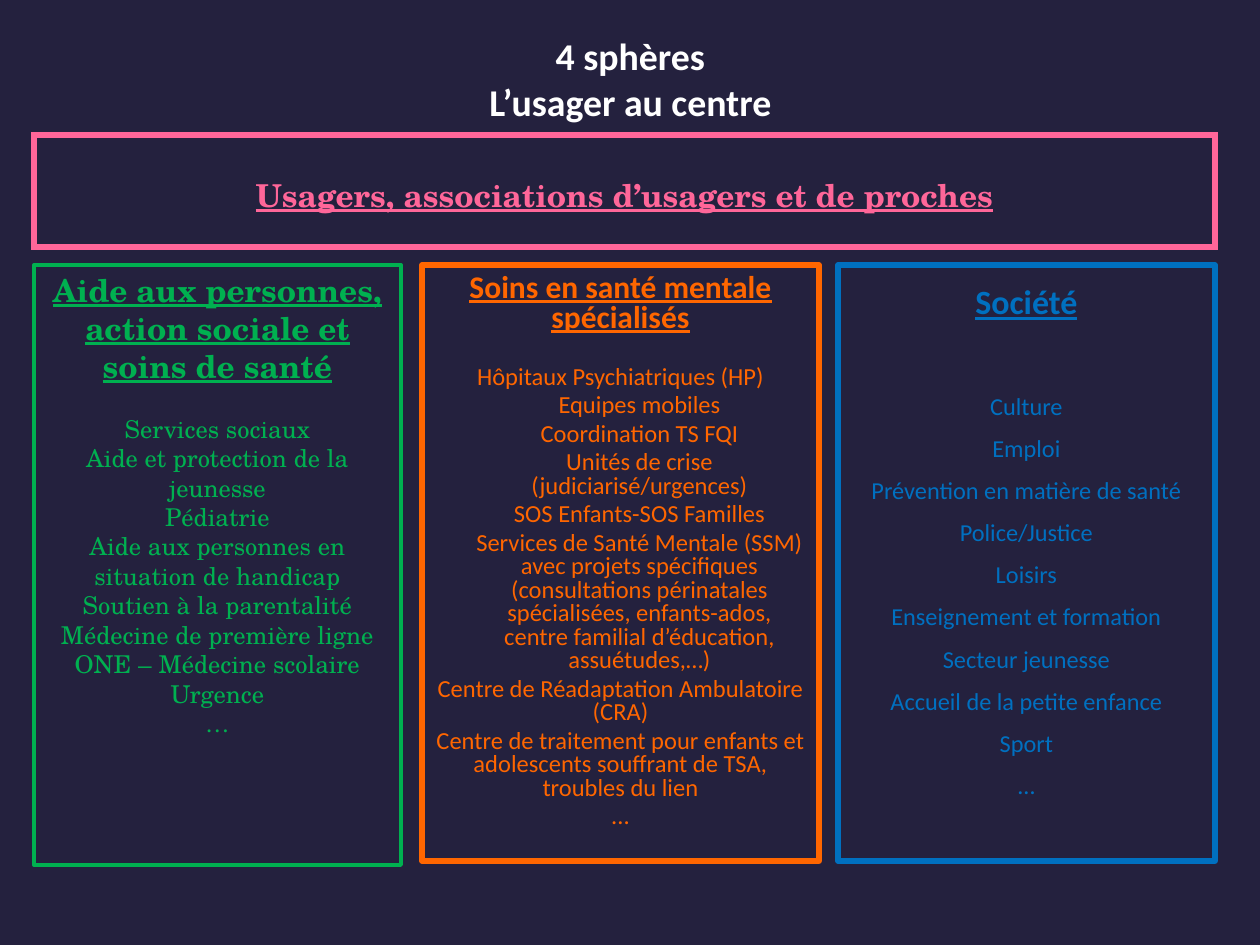
from lxml import etree
from pptx import Presentation
from pptx.dml.color import RGBColor
from pptx.enum.shapes import MSO_SHAPE
from pptx.enum.text import MSO_ANCHOR, PP_ALIGN
from pptx.oxml.ns import qn
from pptx.util import Emu, Pt

EMU_PER_PX = 914400 / 126
RECTANGLE = MSO_SHAPE.RECTANGLE
TOP, MIDDLE = MSO_ANCHOR.TOP, MSO_ANCHOR.MIDDLE
CENTER = PP_ALIGN.CENTER

SANS, SERIF = "Calibri", "TeX Gyre Schola"
NAVY, WHITE = "24213E", "FFFFFF"
PINK, GREEN, ORANGE, BLUE = "FF6699", "00B050", "FF6600", "0070C0"
SIDE_INSET, EDGE_INSET = 13, 6
SUB_INDENT = 38

SOCIAL_CARE = [
    "Services sociaux",
    "Aide et protection de la jeunesse",
    "Pédiatrie",
    "Aide aux personnes en situation de handicap",
    "Soutien à la parentalité",
    "Médecine de première ligne",
    "ONE – Médecine scolaire",
    "Urgence",
    "…",
]
MENTAL_HEALTH = [
    "Hôpitaux Psychiatriques (HP)",
    "Equipes mobiles",
    "Coordination TS FQI",
    "Unités de crise (judiciarisé/urgences)",
    "SOS Enfants-SOS Familles",
    "Services de Santé Mentale (SSM) avec projets spécifiques "
    "(consultations périnatales spécialisées, enfants-ados, "
    "centre familial d’éducation, assuétudes,…)",
    "Centre de Réadaptation Ambulatoire (CRA)",
    "Centre de traitement pour enfants et adolescents souffrant de TSA, "
    "troubles du lien",
    "...",
]
MENTAL_HEALTH_SUBITEMS = range(1, 6)
SOCIETY = [
    "Culture",
    "Emploi",
    "Prévention en matière de santé",
    "Police/Justice",
    "Loisirs",
    "Enseignement et formation",
    "Secteur jeunesse",
    "Accueil de la petite enfance",
    "Sport",
    "…",
]


def px(length):
    return Emu(round(length * EMU_PER_PX))


def rgb(color):
    return RGBColor.from_string(color)


def prepare_frame(frame, top_inset=EDGE_INSET, anchor=TOP):
    frame.word_wrap = True
    frame.vertical_anchor = anchor
    frame.margin_left = frame.margin_right = px(SIDE_INSET)
    frame.margin_top, frame.margin_bottom = px(top_inset), px(EDGE_INSET)


def write(paragraph, text, font, size, color, bold=False, underline=False,
          before=0, spacing=1.0, indent=0):
    paragraph.text = text
    paragraph.alignment = CENTER
    paragraph.line_spacing = spacing
    paragraph.space_before = Pt(before)
    if indent:
        paragraph._p.get_or_add_pPr().set("marL", str(px(indent)))
    style = paragraph.font
    style.name, style.size, style.color.rgb = font, Pt(size), rgb(color)
    style.bold, style.underline = bold, underline


def add_title(slide, lines):
    frame = slide.shapes.add_textbox(*map(px, (25, 26, 1211, 105))).text_frame
    prepare_frame(frame, anchor=MIDDLE)
    for index, line in enumerate(lines):
        paragraph = frame.add_paragraph() if index else frame.paragraphs[0]
        write(paragraph, line, SANS, 21.6, WHITE, bold=True)


def add_sphere(slide, box, color, heading, font, heading_size, top_inset,
               line_width=3, heading_spacing=1.0):
    sphere = slide.shapes.add_shape(RECTANGLE, *map(px, box))
    sphere.shadow.inherit = False
    sphere.fill.background()
    sphere.line.color.rgb = rgb(color)
    sphere.line.width = Pt(line_width)
    frame = sphere.text_frame
    prepare_frame(frame, top_inset)
    write(frame.paragraphs[0], heading, font, heading_size, color,
          bold=True, underline=True, spacing=heading_spacing)
    return sphere


def add_items(sphere, items, font, size, color, first_gap, gap=0,
              spacing=1.0, subitems=()):
    for index, item in enumerate(items):
        write(sphere.text_frame.add_paragraph(), item, font, size, color,
              before=gap if index else first_gap, spacing=spacing,
              indent=SUB_INDENT if index in subitems else 0)


def square_corners(shape):
    outline = shape.line._get_or_add_ln()
    etree.SubElement(outline, qn("a:miter")).set("lim", "800000")


def main():
    deck = Presentation()
    deck.slide_width, deck.slide_height = px(1260), px(945)
    slide = deck.slides.add_slide(deck.slide_layouts[6])
    slide.background.fill.solid()
    slide.background.fill.fore_color.rgb = rgb(NAVY)

    add_title(slide, ["4 sphères", "L’usager au centre"])

    mental_health = add_sphere(
        slide, (422, 265, 397, 596), ORANGE,
        "Soins en santé mentale spécialisés", SANS, 18, 9,
        heading_spacing=0.8)
    add_items(mental_health, MENTAL_HEALTH, SANS, 14, ORANGE, 18.4, 2.8, 0.8,
              MENTAL_HEALTH_SUBITEMS)

    society = add_sphere(slide, (838, 265, 377, 596), BLUE, "Société",
                         SANS, 19.4, 16)
    add_items(society, SOCIETY, SANS, 13.9, BLUE, 34.6, 2.4, 1.3)

    social_care = add_sphere(
        slide, (34, 265, 367, 600), GREEN,
        "Aide aux personnes, action sociale et soins de santé", SERIF, 18,
        EDGE_INSET, line_width=2.25)
    add_items(social_care, SOCIAL_CARE, SERIF, 14, GREEN, 16.8)

    users = add_sphere(
        slide, (34, 135, 1181, 112), PINK,
        "Usagers, associations d’usagers et de proches", SERIF, 18, 41)
    square_corners(users)

    deck.save("out.pptx")


if __name__ == "__main__":
    main()
